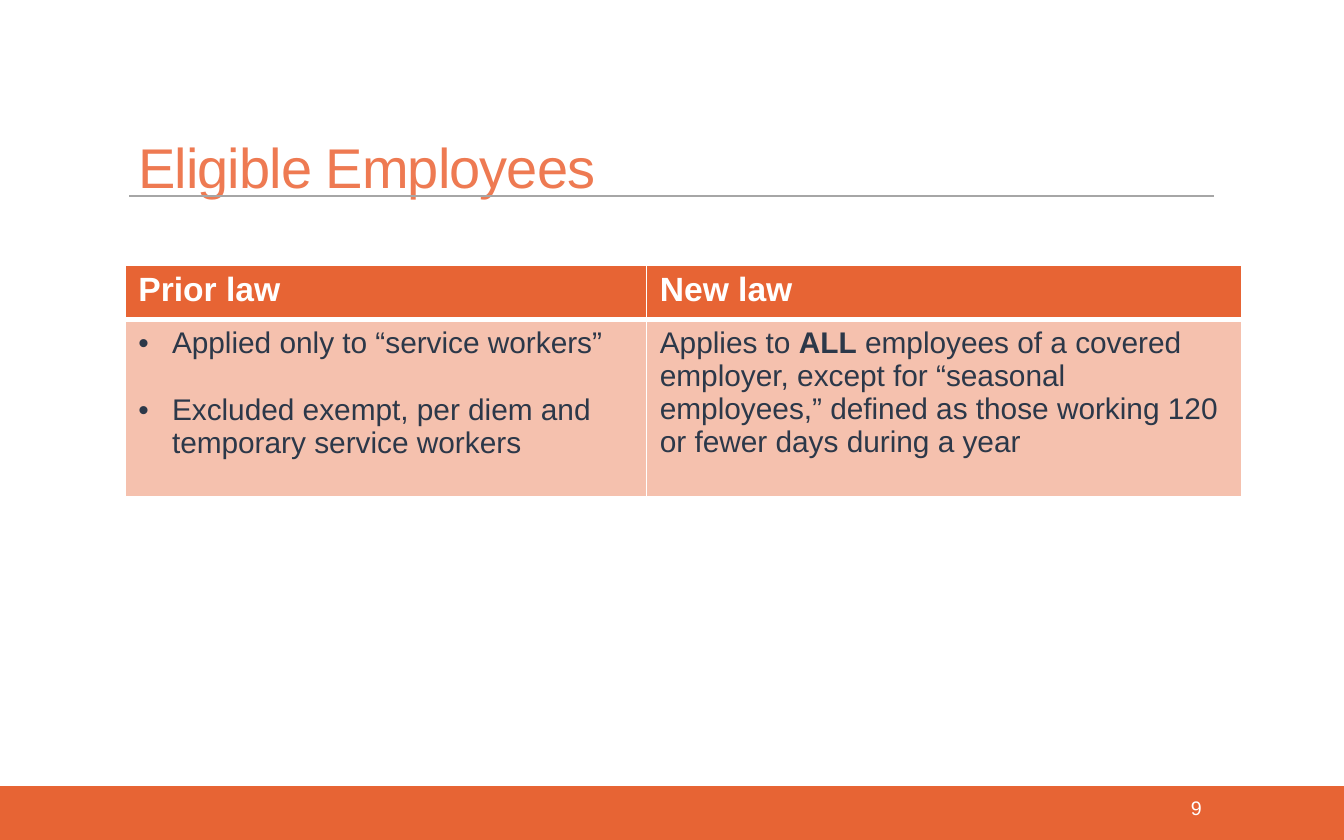
from lxml import etree
from pptx import Presentation
from pptx.dml.color import RGBColor
from pptx.enum.shapes import MSO_CONNECTOR, MSO_SHAPE
from pptx.enum.text import MSO_ANCHOR, PP_ALIGN
from pptx.oxml.ns import qn
from pptx.util import Inches, Pt

LINE = MSO_CONNECTOR.STRAIGHT
RECT = MSO_SHAPE.RECTANGLE
TOP = MSO_ANCHOR.TOP
LEFT, RIGHT = PP_ALIGN.LEFT, PP_ALIGN.RIGHT

ORANGE = RGBColor(0xE7, 0x64, 0x34)
CORAL = RGBColor(0xEE, 0x7A, 0x52)
PINK = RGBColor(0xF5, 0xC1, 0xAE)
NAVY = RGBColor(0x2C, 0x38, 0x49)
GRAY = RGBColor(0xA6, 0xA6, 0xA6)
WHITE = RGBColor(0xFF, 0xFF, 0xFF)

TITLE = "Eligible Employees"
PAGE = "9"
HEADS = ["Prior law", "New law"]
PRIOR = [
    "Applied only to “service workers”",
    "Excluded exempt, per diem and temporary service workers",
]
NEW = [
    ("Applies to ", False),
    ("ALL", True),
    (" employees of a covered employer, except for “seasonal employees,” "
     "defined as those working 120 or fewer days during a year", False),
]
COLS = [3.88, 4.43]
ROWS = [0.41, 1.32]

HEAD = {"size": Pt(18), "bold": True}
BODY = {"size": Pt(16), "bold": False}


def style(font, color, form):
    font.name = "Arial"
    font.color.rgb = color
    for key, value in form.items():
        setattr(font, key, value)


def add_run(para, text, color, form):
    run = para.add_run()
    run.text = text
    style(run.font, color, form)
    return run


def add_bullet(para):
    props = para._p.get_or_add_pPr()
    props.set("marL", str(Inches(0.25)))
    props.set("indent", str(-Inches(0.25)))
    etree.SubElement(props, qn("a:buFont"), typeface="Arial")
    etree.SubElement(props, qn("a:buChar"), char="•")


def set_cell(cell, fill, sides):
    """Fill a cell and draw white borders; sides maps a side to points."""
    props = cell._tc.get_or_add_tcPr()
    for side, width in sides.items():
        edge = etree.SubElement(props, qn("a:ln" + side), w=str(Pt(width)))
        paint = etree.SubElement(edge, qn("a:solidFill"))
        etree.SubElement(paint, qn("a:srgbClr"), val=str(WHITE))
    cell.fill.solid()
    cell.fill.fore_color.rgb = fill


deck = Presentation()
deck.slide_width, deck.slide_height = Inches(10), Inches(6.25)
slide = deck.slides.add_slide(deck.slide_layouts[5])
shapes = slide.shapes

# Footer band and title rule
band = shapes.add_shape(RECT, 0, Inches(5.85), Inches(10), Inches(0.4))
band.shadow.inherit = False
band.fill.solid()
band.fill.fore_color.rgb = ORANGE
band.line.fill.background()

rule = shapes.add_connector(LINE, Inches(0.96), Inches(1.46), Inches(9.03), Inches(1.46))
rule.line.color.rgb = GRAY
rule.line.width = Pt(1)
etree.SubElement(rule._element.spPr, qn("a:effectLst"))

# Title
title = shapes.title
title.left, title.top = Inches(0.93), Inches(0.97)
title.width, title.height = Inches(6.37), Inches(0.39)
frame = title.text_frame
frame.vertical_anchor = TOP
frame.margin_top = Inches(0.09)
para = frame.paragraphs[0]
para.alignment = LEFT
para.line_spacing = 0.85
run = add_run(para, TITLE, CORAL, {"size": Pt(30)})
run.font._element.set("spc", "-50")

# Page number
page = shapes.add_textbox(Inches(7.96), Inches(5.87), Inches(1.08), Inches(0.33))
page.text_frame.word_wrap = True
para = page.text_frame.paragraphs[0]
para.alignment = RIGHT
add_run(para, PAGE, WHITE, {"size": Pt(10.5)})

# Comparison table
table = shapes.add_table(len(ROWS), len(COLS), Inches(0.93), Inches(1.97),
                         Inches(sum(COLS)), Inches(sum(ROWS))).table
for col, width in zip(table.columns, COLS):
    col.width = Inches(width)
for row, height in zip(table.rows, ROWS):
    row.height = Inches(height)

for i, head in enumerate(HEADS):
    cell = table.cell(0, i)
    set_cell(cell, ORANGE, {"L": 1, "R": 1, "T": 1, "B": 3})
    add_run(cell.text_frame.paragraphs[0], head, WHITE, HEAD)
    set_cell(table.cell(1, i), PINK, {"L": 1, "R": 1, "T": 3, "B": 1})

frame = table.cell(1, 0).text_frame
for i, text in enumerate(PRIOR):
    para = frame.add_paragraph() if i else frame.paragraphs[0]
    if i:
        para.space_before = Pt(18)
    add_bullet(para)
    add_run(para, text, NAVY, BODY)

para = table.cell(1, 1).text_frame.paragraphs[0]
for text, bold in NEW:
    add_run(para, text, NAVY, {**BODY, "bold": bold})

deck.save("out.pptx")
